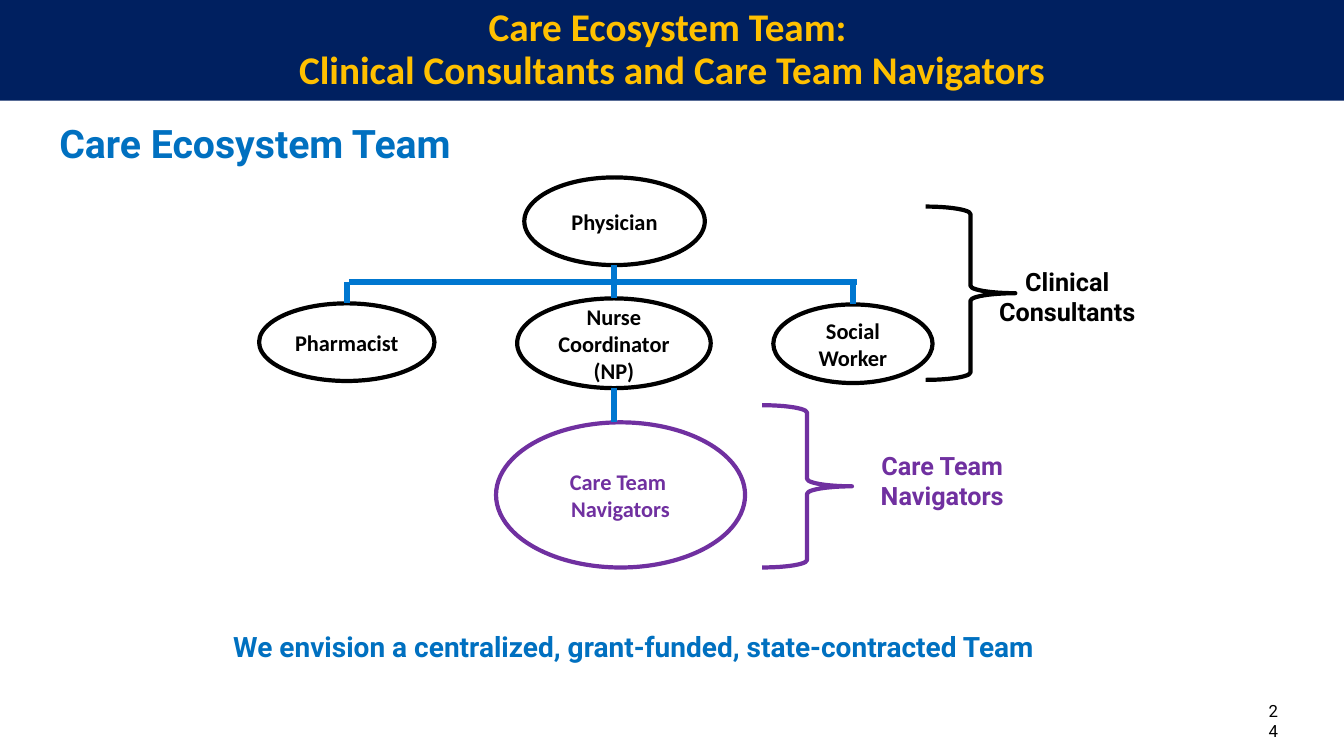
import dataclasses
import typing

import lxml.etree
import pptx
import pptx.dml.color
import pptx.enum.shapes
import pptx.enum.text
import pptx.oxml.ns
import pptx.util

RGBColor = pptx.dml.color.RGBColor
Shape = pptx.enum.shapes.MSO_SHAPE
Align = pptx.enum.text.PP_ALIGN
Anchor = pptx.enum.text.MSO_ANCHOR

BLACK = RGBColor(0x00, 0x00, 0x00)
PURPLE = RGBColor(0x70, 0x30, 0xA0)
NAVY = RGBColor(0x00, 0x20, 0x60)
GOLD = RGBColor(0xFF, 0xC0, 0x00)
BLUE = RGBColor(0x00, 0x70, 0xC0)
LINK_BLUE = RGBColor(0x00, 0x77, 0xD0)

SLIDE_WIDTH = pptx.util.Inches(13.33)
SLIDE_HEIGHT = pptx.util.Inches(7.5)


# Places are percentages of the slide's width and height
class Area(typing.NamedTuple):
    left: float
    top: float
    width: float
    height: float


@dataclasses.dataclass
class Role:
    lines: list[str]
    area: Area
    color: RGBColor = BLACK


@dataclasses.dataclass
class Group:
    name: str
    brace: Area
    label: Area
    color: RGBColor


@dataclasses.dataclass
class Note:
    text: str
    area: Area
    size: int
    color: RGBColor = BLUE
    bold: bool = True
    align: Align = Align.CENTER
    anchor: Anchor = Anchor.TOP


PHYSICIAN = Role(["Physician"], Area(39.01, 23.47, 13.43, 11.6))
CONSULTANTS = [
    Role(["Pharmacist"], Area(19.28, 40.13, 13.05, 10.27)),
    Role(["Nurse Coordinator (NP)"], Area(38.48, 39.47, 14.4, 11.87)),
    Role(["Social Worker"], Area(57.54, 40.27, 11.85, 10.4)),
]
NAVIGATORS = Role(["Care Team ", "Navigators"],
                  Area(36.91, 55.87, 18.53, 19.2), PURPLE)

GROUPS = [
    Group("Clinical Consultants", Area(68.87, 27.33, 6.68, 22.93),
          Area(72.69, 34.53, 13.43, 9.47), BLACK),
    Group("Care Team Navigators", Area(56.71, 53.6, 6.68, 21.47),
          Area(63.39, 58.93, 13.43, 9.47), PURPLE),
]

NOTES = [
    Note("Care Ecosystem Team", Area(3.68, 15.07, 34.81, 7.6), 28,
         align=Align.LEFT),
    Note("We envision a centralized, grant-funded, state-contracted Team ",
         Area(11.03, 82.67, 72.77, 5.87), 20),
    Note("24", Area(93.32, 92.67, 2.85, 5.33), 12, BLACK, bold=False,
         anchor=Anchor.MIDDLE),
]

BAR_Y = 37.33
BAR_LEFT, BAR_RIGHT = 25.96, 63.77
NAVIGATOR_STEM_X = 45.69


def across(share: float) -> int:
    return round(SLIDE_WIDTH * share / 100)


def down(share: float) -> int:
    return round(SLIDE_HEIGHT * share / 100)


def bounds(area: Area) -> tuple[int, int, int, int]:
    return (across(area.left), down(area.top),
            across(area.width), down(area.height))


def write(box, lines: list[str], *, size: int, color: RGBColor,
          font: str = "Roboto", bold: bool = True, align=Align.CENTER,
          anchor=Anchor.MIDDLE, spacing: float = 1.0) -> None:
    frame = box.text_frame
    frame.word_wrap = True
    frame.auto_size = pptx.enum.text.MSO_AUTO_SIZE.NONE
    frame.vertical_anchor = anchor
    for index, line in enumerate(lines):
        para = frame.add_paragraph() if index else frame.paragraphs[0]
        para.alignment = align
        para.line_spacing = spacing
        span = para.add_run()
        span.text = line
        span.font.name = font
        span.font.size = pptx.util.Pt(size)
        span.font.bold = bold
        span.font.color.rgb = color


def draw_outline(page, kind: Shape, area: Area, color: RGBColor):
    shape = page.shapes.add_shape(kind, *bounds(area))
    shape.shadow.inherit = False
    shape.fill.background()
    shape.line.color.rgb = color
    shape.line.width = pptx.util.Pt(3)
    return shape


def draw_role(page, role: Role):
    oval = draw_outline(page, Shape.OVAL, role.area, role.color)
    write(oval, role.lines, size=16, color=role.color, font="Calibri")
    return oval


def draw_note(page, note: Note) -> None:
    box = page.shapes.add_textbox(*bounds(note.area))
    write(box, [note.text], size=note.size, color=note.color,
          bold=note.bold, align=note.align, anchor=note.anchor)


def draw_link(page, x1: float, y1: float, x2: float, y2: float):
    link = page.shapes.add_connector(
        pptx.enum.shapes.MSO_CONNECTOR.STRAIGHT,
        across(x1), down(y1), across(x2), down(y2))
    link.line.color.rgb = LINK_BLUE
    link.line.width = pptx.util.Pt(4.5)
    properties = link._element.spPr
    lxml.etree.SubElement(properties, pptx.oxml.ns.qn("a:effectLst"))
    return link


def draw_title(page) -> None:
    title = page.shapes.title
    title.left, title.top, title.width, title.height = bounds(
        Area(0, 0, 100, 13.33))
    title.fill.solid()
    title.fill.fore_color.rgb = NAVY
    write(title, ["Care Ecosystem Team: ",
                  "Clinical Consultants and Care Team Navigators"],
          size=28, color=GOLD, font="Calibri", spacing=0.9)


def draw_team(page) -> None:
    draw_role(page, PHYSICIAN)
    draw_role(page, NAVIGATORS)

    # Bar below the physician, with a stem to each consultant
    draw_link(page, BAR_LEFT, BAR_Y, BAR_RIGHT, BAR_Y)
    for role in CONSULTANTS:
        oval = draw_role(page, role)
        middle = role.area.left + role.area.width / 2
        stem = draw_link(page, middle, BAR_Y, middle, role.area.top)
        stem.end_connect(oval, 0)

    # Stems from the physician to the bar and from the nurse to navigators
    nurse = CONSULTANTS[1].area
    middle = nurse.left + nurse.width / 2
    draw_link(page, middle, PHYSICIAN.area.top + PHYSICIAN.area.height,
              middle, BAR_Y)
    draw_link(page, NAVIGATOR_STEM_X, nurse.top + nurse.height,
              NAVIGATOR_STEM_X, NAVIGATORS.area.top)


def main() -> None:
    deck = pptx.Presentation()
    deck.slide_width, deck.slide_height = SLIDE_WIDTH, SLIDE_HEIGHT
    page = deck.slides.add_slide(deck.slide_layouts.get_by_name("Title Only"))

    draw_title(page)
    draw_team(page)

    # Braces with their group names
    for group in GROUPS:
        draw_outline(page, Shape.RIGHT_BRACE, group.brace, group.color)
        draw_note(page, Note(group.name, group.label, 18, group.color))

    # Heading, closing statement and page number
    for note in NOTES:
        draw_note(page, note)

    deck.save("out.pptx")


if __name__ == "__main__":
    main()
